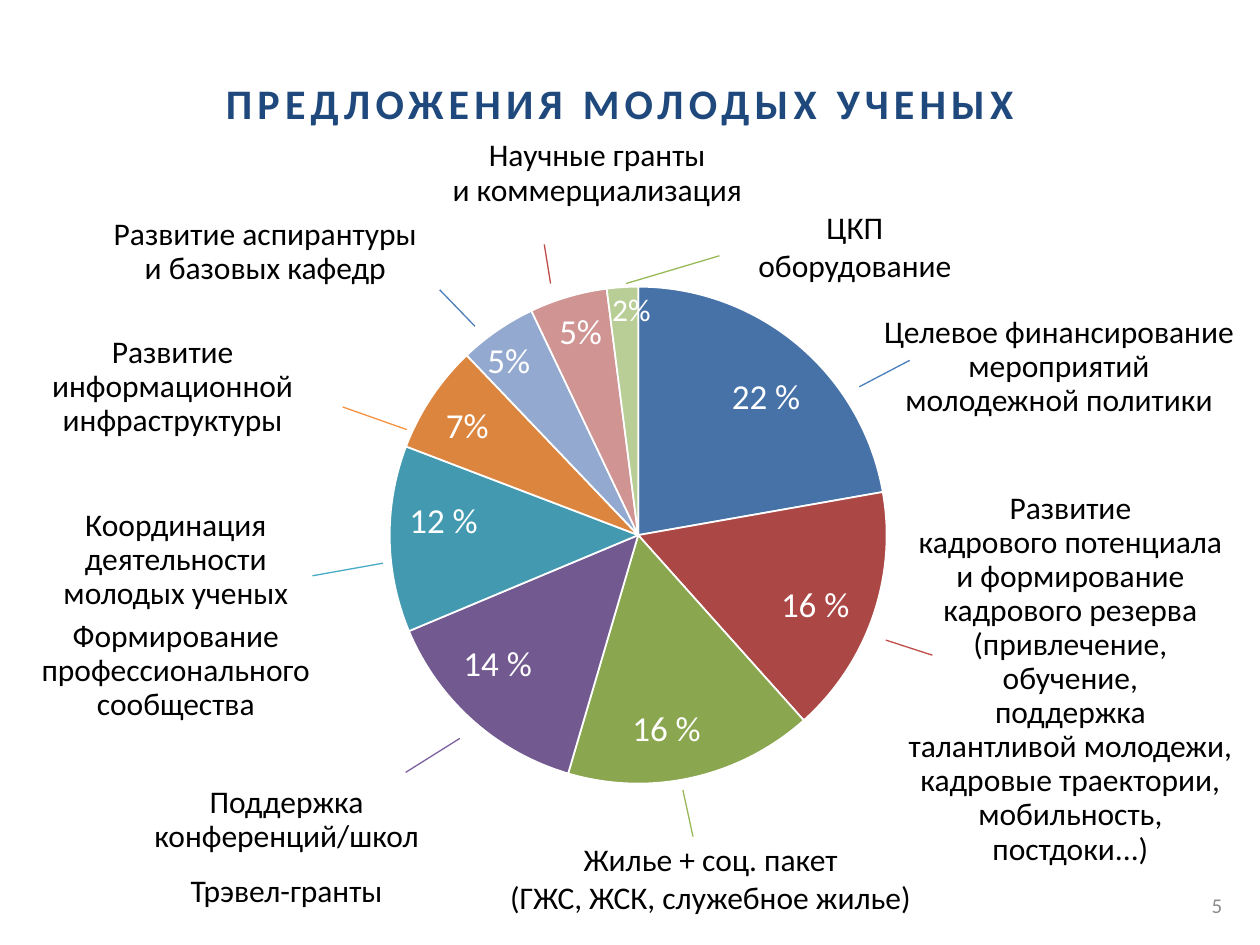
from lxml import etree
from pptx import Presentation
from pptx.chart.data import CategoryChartData
from pptx.dml.color import RGBColor
from pptx.enum.chart import XL_CHART_TYPE as ChartType
from pptx.enum.shapes import MSO_CONNECTOR as Connector
from pptx.enum.text import MSO_ANCHOR as Anchor, PP_ALIGN as Align
from pptx.oxml import parse_xml
from pptx.oxml.ns import nsdecls, qn
from pptx.util import Inches, Pt

FONT = "Calibri"
COLORS = {
    "title": "1F497D", "text": "000000", "white": "FFFFFF", "number": "8C8C8C",
    "blue": "4B7EBC", "red": "BF4C48", "green": "98B955",
    "purple": "7D60A0", "teal": "46AAC5", "orange": "F69240",
}
SHARES = [
    (22, "4672A8"), (16, "AB4744"), (16, "8AA64F"), (14, "725990"), (12, "4299B0"),
    (7, "DC853E"), (5, "93A9CF"), (5, "D09493"), (2, "B9CD96"),
]
PERCENTS = [
    ("22 %", 2.76, 0.9, 20), ("16 %", 3.15, 2.55, 20), ("16 %", 1.97, 3.54, 20),
    ("14 %", 0.63, 3.02, 20), ("12 %", 0.2, 1.89, 20), ("7%", 0.49, 1.13, 20),
    ("5%", 0.82, 0.62, 20), ("5%", 1.39, 0.39, 20), ("2%", 1.81, 0.23, 18),
]
LABELS = [
    (6.87, 2.46, 3.07, 0.92, 0.9,
     ["Целевое финансирование", "мероприятий", "молодежной политики"], {}),
    (7.1, 3.86, 2.79, 3.4, 0.9,
     ["Развитие", "кадрового потенциала", "и формирование", "кадрового резерва",
      "(привлечение,", "обучение,", "поддержка", "талантливой молодежи,",
      "кадровые траектории,", "мобильность,", "постдоки...)"], {}),
    (3.93, 6.62, 3.42, 0.71, 1, ["Жилье + соц. пакет", "(ГЖС, ЖСК, служебное жилье)"], {}),
    (1.11, 6.19, 2.33, 1.08, 0.9,
     ["Поддержка", "конференций/школ", "Трэвел-гранты"], {2: 12}),
    (-0.05, 3.99, 2.89, 1.81, 0.9,
     ["Координация", "деятельности", "молодых ученых",
      "Формирование", "профессионального", "сообщества"], {3: 5}),
    (0.01, 2.62, 2.72, 1.22, 0.9, ["Развитие", "информационной", "инфраструктуры"], {}),
    (0.76, 1.68, 2.69, 0.65, 0.9, ["Развитие аспирантуры", "и базовых кафедр"], {}),
    (3.48, 1.06, 2.52, 0.65, 0.9, ["Научные гранты", "и коммерциализация"], {}),
    (5.91, 1.6, 1.75, 0.71, 1, ["ЦКП", "оборудование"], {}),
]
LEADERS = [
    (5.42, 6.27, 5.5, 6.64, "green"), (6.82, 3.07, 7.22, 2.86, "blue"),
    (3.77, 2.59, 3.49, 2.3, "blue"), (4.32, 1.94, 4.37, 2.25, "red"),
    (3.23, 3.41, 2.72, 3.23, "orange"), (3.65, 5.86, 3.22, 6.13, "purple"),
    (3.04, 4.47, 2.48, 4.57, "teal"), (7.03, 5.08, 7.4, 5.2, "red"),
    (4.97, 2.25, 5.71, 2.03, "green"),
]


def rgb(name):
    return RGBColor.from_string(COLORS[name])


def style(font, size, color):
    font.name = FONT
    font.size = Pt(size)
    font.color.rgb = rgb(color)


def add_text(slide, box, lines, size, color, align=Align.CENTER, spacing=1, gaps=None):
    tf = slide.shapes.add_textbox(*box).text_frame
    tf.word_wrap = True
    for i, line in enumerate(lines):
        p = tf.add_paragraph() if i else tf.paragraphs[0]
        p.text = line
        p.alignment = align
        p.line_spacing = spacing
        if gaps and i in gaps:
            p.space_before = Pt(gaps[i])
        style(p.font, size, color)
    return tf


def add_title(slide, left, top, width, height):
    title = slide.shapes.title
    title.left, title.top, title.width, title.height = left, top, width, height
    tf = title.text_frame
    tf.vertical_anchor = Anchor.MIDDLE
    p = tf.paragraphs[0]
    p.alignment = Align.CENTER
    r = p.add_run()
    r.text = "ПРЕДЛОЖЕНИЯ МОЛОДЫХ УЧЕНЫХ"
    style(r.font, 24, "title")
    r.font.bold = True
    r.font._element.set("spc", "300")


def add_pie(slide, left, top, width, height):
    data = CategoryChartData()
    data.categories = [str(n + 1) for n in range(len(SHARES))]
    data.add_series("Series 1", [value for value, _ in SHARES])
    chart = slide.shapes.add_chart(ChartType.PIE, left, top, width, height, data).chart
    chart.has_legend = False
    chart.has_title = False
    style(chart.font, 18, "text")
    plot = chart.plots[0]
    plot.vary_by_categories = True
    for i, (_, color) in enumerate(SHARES):
        fmt = plot.series[0].points[i].format
        fmt.fill.solid()
        fmt.fill.fore_color.rgb = RGBColor.from_string(color)
        fmt.line.color.rgb = rgb("white")
        fmt.line.width = Pt(1)

    area = chart._chartSpace.chart.plotArea
    for old in area.findall(qn("c:layout")):
        area.remove(old)
    layout = parse_xml(f"<c:layout {nsdecls('c')}><c:manualLayout/></c:layout>")
    settings = [("layoutTarget", "inner"), ("xMode", "edge"), ("yMode", "edge"),
                ("x", "0.033"), ("y", "0.059"), ("w", "0.911"), ("h", "0.911")]
    for tag, value in settings:
        etree.SubElement(layout[0], qn(f"c:{tag}")).set("val", value)
    area.insert(0, layout)

    for text, x, y, size in PERCENTS:
        box = (left + Inches(x), top + Inches(y), Inches(0.82), Inches(0.44))
        add_text(slide, box, [text], size, "white", Align.LEFT)


def add_labels(slide, left, top):
    for x, y, w, h, spacing, lines, gaps in LABELS:
        box = (left + Inches(x), top + Inches(y), Inches(w), Inches(h))
        add_text(slide, box, lines, 18, "text", spacing=spacing, gaps=gaps)


def add_leaders(slide, left, top):
    for x1, y1, x2, y2, color in LEADERS:
        line = slide.shapes.add_connector(
            Connector.STRAIGHT, left + Inches(x1), top + Inches(y1),
            left + Inches(x2), top + Inches(y2))
        line.line.color.rgb = rgb(color)
        line.line.width = Pt(0.75)
        etree.SubElement(line._element.spPr, qn("a:effectLst"))


def add_number(slide, left, top, width, height):
    tf = add_text(slide, (left, top, width, height), ["5"], 12, "number", Align.RIGHT)
    tf.vertical_anchor = Anchor.MIDDLE


def main():
    prs = Presentation()
    prs.slide_width, prs.slide_height = Inches(10), Inches(7.5)
    slide = prs.slides.add_slide(prs.slide_layouts[5])
    add_title(slide, Inches(0.42), Inches(0.42), Inches(9), Inches(0.79))
    add_pie(slide, Inches(2.95), Inches(2.02), Inches(4.33), Inches(4.33))
    add_labels(slide, Inches(0), Inches(0))
    add_number(slide, Inches(7.47), Inches(6.98), Inches(2.33), Inches(0.4))
    add_leaders(slide, Inches(0), Inches(0))
    prs.save("out.pptx")


if __name__ == "__main__":
    main()
